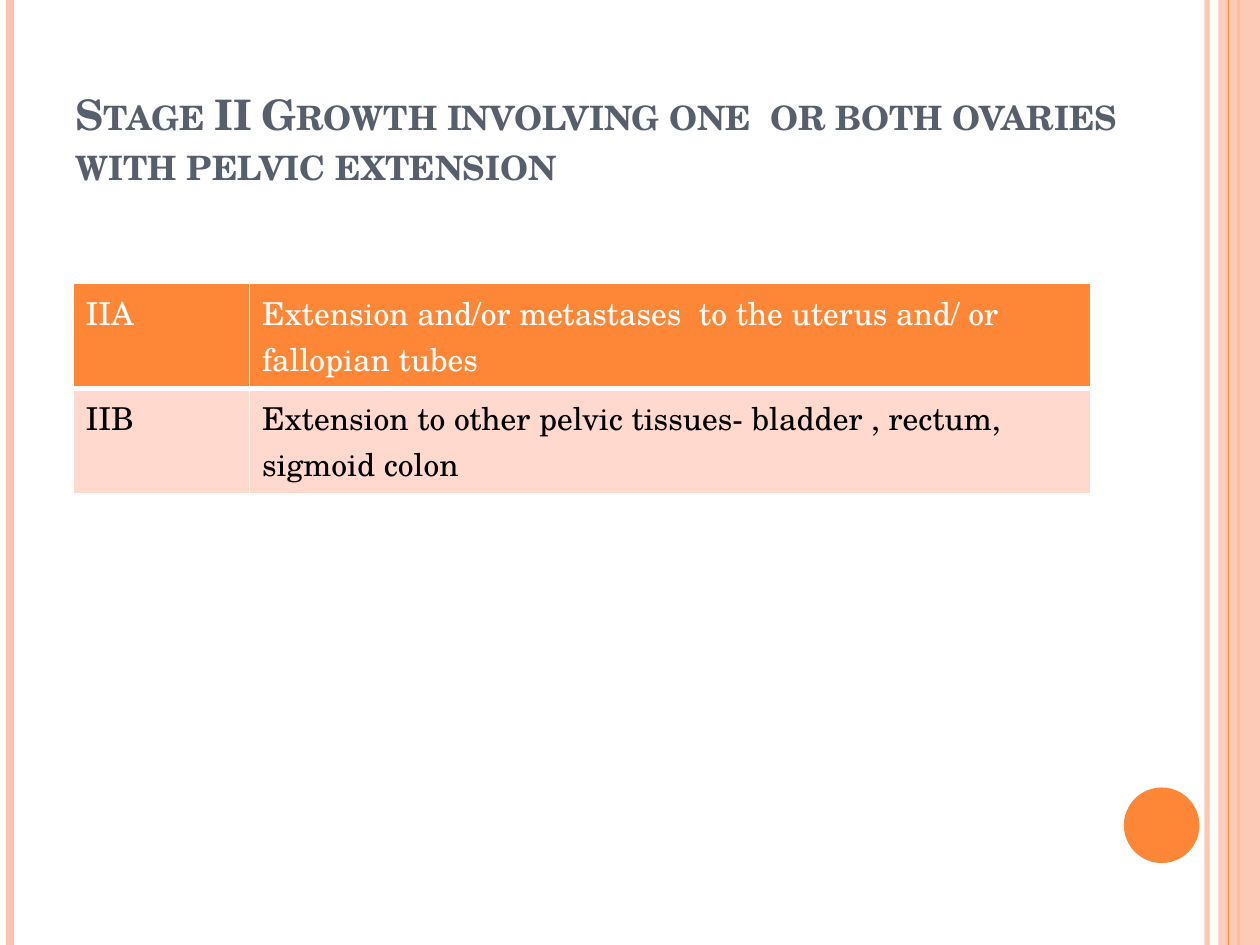
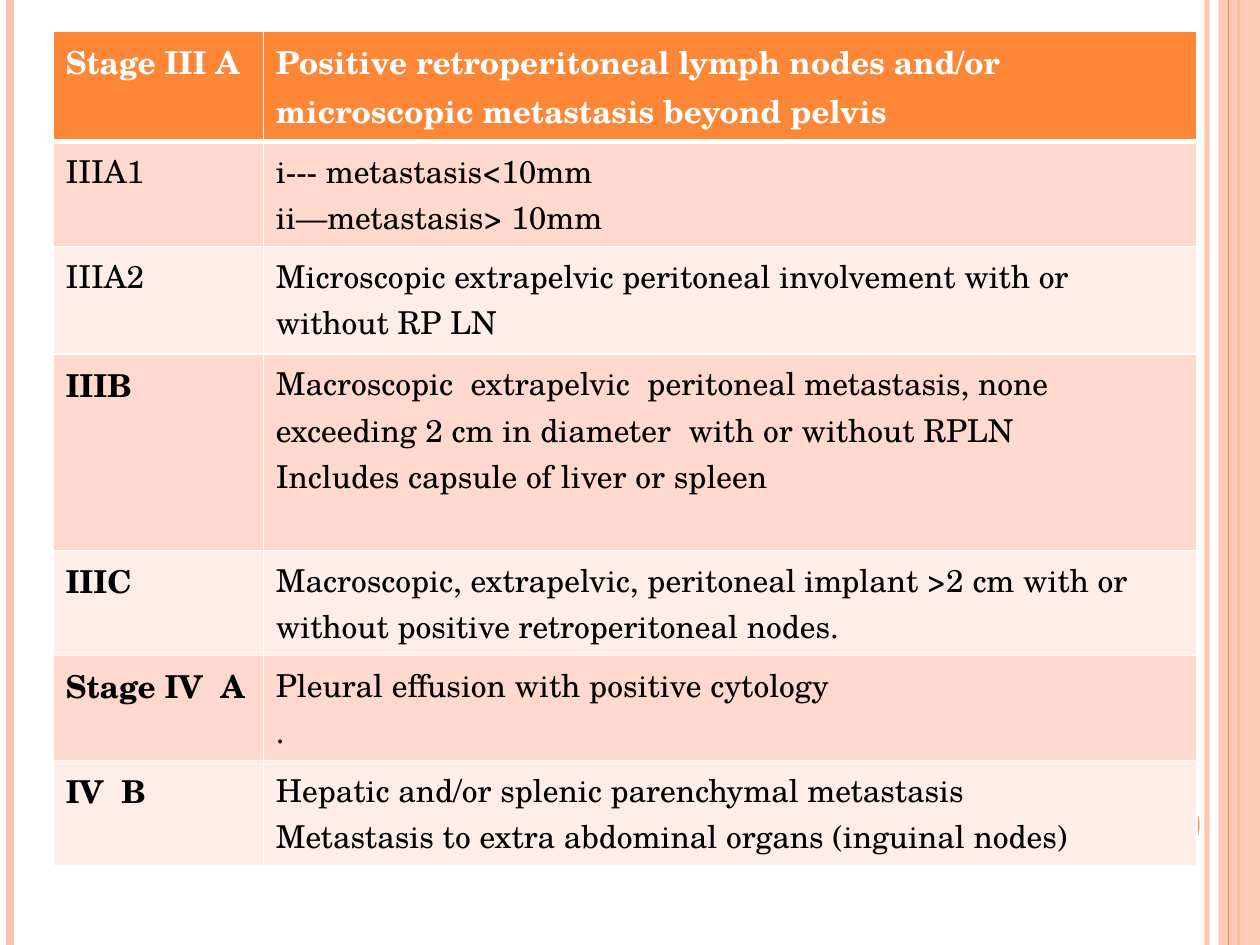
import pptx
import pptx.util
import pptx.dml.color
import pptx.enum.shapes
import pptx.enum.text
import pptx.oxml
import pptx.oxml.ns
from pptx.util import Inches, Pt

FONT = "TeX Gyre Schola"
PINK, ORANGE, WHITE, BLACK = "FEC3AE", "FE8637", "FFFFFF", "000000"
SLATE, BANDS = "575F6D", ("FFEDE8", "FFD9CE")
NS = pptx.oxml.ns.nsdecls("a")


def paint(fill, tone, alpha=100):
    """Fill with a solid hex colour at a given opacity in percent."""
    fill.solid()
    fill.fore_color.rgb = pptx.dml.color.RGBColor.from_string(tone)
    if alpha < 100:
        node = pptx.oxml.parse_xml(f'<a:alpha {NS} val="{alpha * 1000}"/>')
        fill._xPr.find(".//" + pptx.oxml.ns.qn("a:srgbClr")).append(node)


def style(para, size, tone, bold):
    para.font.name = FONT
    para.font.size = Pt(size)
    para.font.bold = bold
    paint(para.font.fill, tone)


# x, colour, width in points, opacity
LINES = [
    (9.58, PINK, 3, 93),
    (0.08, PINK, 4.5, 100),
    (9.83, ORANGE, 1.5, 100),
    (9.75, ORANGE, 0.75, 100),
]

# Each row: label, label is bold, text is bold, height, paragraphs
PAGES = [
    {
        "title": "Stage II Growth involving one  or both ovaries with pelvic extension",
        "at": (0.58, 2.25),
        "cols": (1.4, 6.68),
        "rows": [
            ("IIA", False, False, 0.83,
             ["Extension and/or metastases  to the uterus and/ or fallopian tubes"]),
            ("IIB", False, False, 0.83,
             ["Extension to other pelvic tissues- bladder , rectum, sigmoid colon"]),
        ],
    },
    {
        "title": None,
        "at": (0.42, 0.25),
        "cols": (1.67, 7.41),
        "rows": [
            ("Stage III A", True, True, 0.87,
             ["Positive retroperitoneal lymph nodes and/or microscopic metastasis beyond pelvis"]),
            ("IIIA1", False, False, 0.83,
             ["i--- metastasis<10mm", "ii—metastasis> 10mm"]),
            ("IIIA2", False, False, 0.85,
             ["Microscopic extrapelvic peritoneal involvement with or without RP LN"]),
            ("IIIB", True, False, 1.56,
             ["Macroscopic  extrapelvic  peritoneal metastasis, none exceeding 2 cm "
              "in diameter  with or without RPLN",
              "Includes capsule of liver or spleen"]),
            ("IIIC", True, False, 0.83,
             ["Macroscopic, extrapelvic, peritoneal implant >2 cm with or without "
              "positive retroperitoneal nodes."]),
            ("Stage IV  A", True, False, 0.83,
             ["Pleural effusion with positive cytology", "."]),
            ("IV  B", True, False, 0.83,
             ["Hepatic and/or splenic parenchymal metastasis",
              "Metastasis to extra abdominal organs (inguinal nodes)"]),
        ],
    },
]

deck = pptx.Presentation()
deck.slide_width, deck.slide_height = Inches(10), Inches(7.5)
KINDS = pptx.enum.shapes.MSO_SHAPE

for page in PAGES:
    slide = deck.slides.add_slide(deck.slide_layouts[5 if page["title"] else 6])
    paint(slide.background.fill, WHITE)

    # Side bands and circle
    for num, (x, tone, width, alpha) in enumerate(LINES):
        if num == 3:
            band = slide.shapes.add_shape(
                KINDS.RECTANGLE, Inches(9.67), 0, Inches(0.33), Inches(7.5))
            paint(band.fill, PINK, 87)
        line = slide.shapes.add_connector(
            pptx.enum.shapes.MSO_CONNECTOR.STRAIGHT,
            Inches(x), 0, Inches(x), Inches(7.5))
        line.line.width = Pt(width)
        paint(line.line.fill, tone, alpha)
        line._element.spPr.append(pptx.oxml.parse_xml(f"<a:effectLst {NS}/>"))
    disc = slide.shapes.add_shape(
        KINDS.OVAL, Inches(8.92), Inches(6.25), Inches(0.6), Inches(0.6))
    paint(disc.fill, ORANGE)
    for shape in (band, disc):
        shape.line.fill.background()
        shape.shadow.inherit = False

    if page["title"]:
        title = slide.shapes.title
        title.left, title.top = Inches(0.5), Inches(0.3)
        title.width, title.height = Inches(8.83), Inches(1.25)
        frame = title.text_frame
        frame.text = page["title"]
        frame.word_wrap = True
        frame.auto_size = pptx.enum.text.MSO_AUTO_SIZE.NONE
        frame.vertical_anchor = pptx.enum.text.MSO_ANCHOR.BOTTOM
        para = frame.paragraphs[0]
        para.alignment = pptx.enum.text.PP_ALIGN.LEFT
        style(para, 24, SLATE, True)
        para.font._rPr.set("cap", "small")

    # Staging table
    rows, cols = page["rows"], page["cols"]
    left, top = page["at"]
    table = slide.shapes.add_table(
        len(rows), len(cols), Inches(left), Inches(top),
        Inches(sum(cols)), Inches(sum(row[3] for row in rows))).table
    table.first_row = table.horz_banding = False
    for col, width in zip(table.columns, cols):
        col.width = Inches(width)
    for r, (label, strong, heavy, height, text) in enumerate(rows):
        table.rows[r].height = Inches(height)
        for c, (words, bold) in enumerate([([label], strong), (text, heavy)]):
            cell = table.cell(r, c)
            cell.text = "\n".join(words)
            for para in cell.text_frame.paragraphs:
                style(para, 18, BLACK if r else WHITE, bold)
            props = cell._tc.get_or_add_tcPr()
            for side in "LRTB":
                thick = (r, side) in [(0, "B"), (1, "T")]
                props.append(pptx.oxml.parse_xml(
                    f'<a:ln{side} {NS} w="{Pt(3 if thick else 1)}"><a:solidFill>'
                    f'<a:srgbClr val="{WHITE}"/></a:solidFill></a:ln{side}>'))
            paint(cell.fill, BANDS[r % 2] if r else ORANGE)

deck.save("out.pptx")
